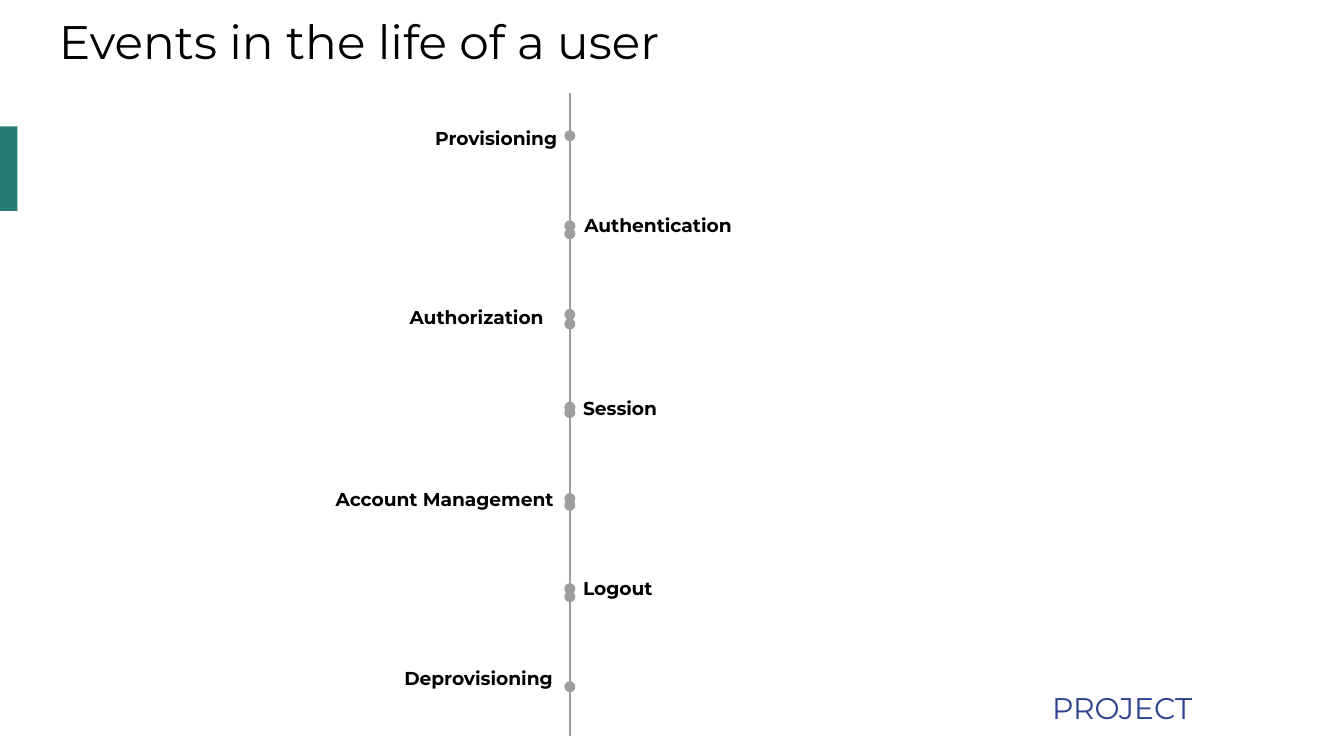
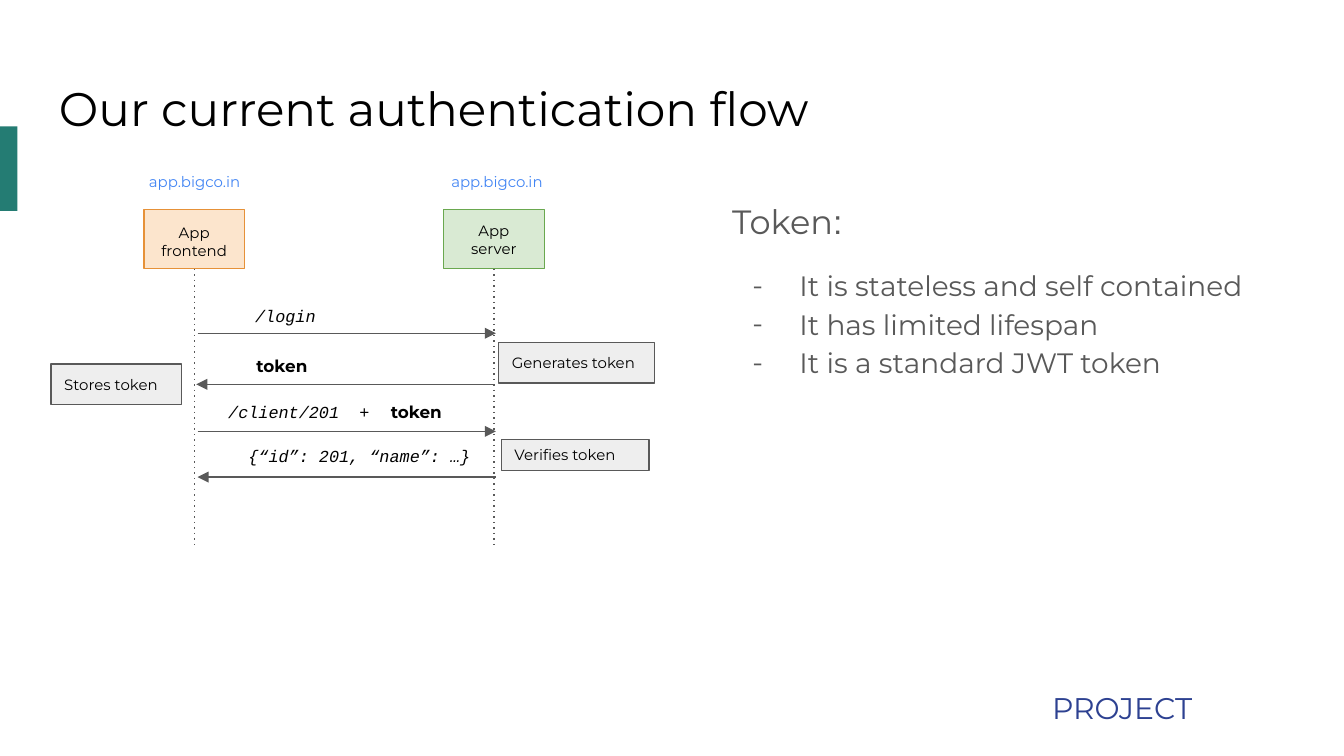
from lxml.etree import SubElement
from pptx import Presentation
from pptx.dml.color import RGBColor
from pptx.enum.shapes import MSO_CONNECTOR, MSO_SHAPE
from pptx.enum.text import MSO_ANCHOR, PP_ALIGN
from pptx.oxml.ns import qn
from pptx.util import Inches, Pt

# Shared look
PAGE_WIDTH = 10
PAGE_HEIGHT = PAGE_WIDTH * 9 / 16
SANS, CODE = "Montserrat", "Courier New"
BLACK, GRAY, SILVER, LIGHT = "000000", "595959", "9E9E9E", "EEEEEE"
TEAL, NAVY, LINK = "247C73", "2D4191", "4285F4"
TITLE = dict(name=SANS, size=25.2, color=BLACK)
FOOTER = dict(name=SANS, size=16, color=NAVY)
EVENT = dict(name=SANS, size=10, color=BLACK, bold=True)
SMALL = dict(name=SANS, size=8, color=BLACK)
ADDRESS = dict(SMALL, color=LINK)
CALL = dict(name=CODE, size=9, color=BLACK, italic=True)
TOKEN = dict(name=SANS, size=9, color=BLACK, bold=True)
HEADING = dict(name=SANS, size=18, color=GRAY)
POINT = dict(name=SANS, size=15, color=GRAY)

# Slide 1 content: event, left, top, width
EVENTS = [
    ("Provisioning", 3.14, 0.86, 1.16),
    ("Authentication", 4.25, 1.51, 1.46),
    ("Authorization", 2.95, 2.19, 1.42),
    ("Session", 4.24, 2.87, 1.64),
    ("Account Management", 2.4, 3.55, 2.13),
    ("Logout", 4.24, 4.21, 1.87),
    ("Deprovisioning", 2.91, 4.88, 1.42),
]
AXIS = 4.24
SPAN_TOPS, SPAN_LENGTH = (1.01, 1.68, 2.34, 3.03, 3.71, 4.38), 0.73
AXIS_ENDS = ((0.69, 1.06), (5.1, 5.48))

# Slide 2 content
ACTORS = [  # name, left, fill, line, address, address left, top inset
    ("App frontend", 1.07, "FCE5CD", "E69138", "app.bigco.in", 1.01, 0.14),
    ("App server", 3.3, "D9EAD3", "6AA84F", "app.bigco.in", 3.26, 0.1),
]
ARROWS = [  # from x, to x, y
    (1.47, 3.69, 2.48),
    (3.67, 1.46, 2.86),
    (1.47, 3.69, 3.21),
    (3.69, 1.47, 3.55),
]
MESSAGES = [  # text, format, left, top, width
    ("/login", CALL, 1.8, 2.2, 0.75),
    ("token", TOKEN, 1.81, 2.57, 1.01),
    ("/client/201  +", CALL, 1.6, 2.91, 1.36),
    ("token", TOKEN, 2.81, 2.91, 1.01),
    ("{“id”: 201, “name”: …}", CALL, 1.75, 3.24, 1.9),
]
NOTES = [  # text, left, top, width, height
    ("Generates token", 3.71, 2.55, 1.16, 0.3),
    ("Verifies token", 3.73, 3.27, 1.1, 0.23),
    ("Stores token", 0.38, 2.71, 0.97, 0.3),
]
POINTS = [
    "It is stateless and self contained",
    "It has limited lifespan",
    "It is a standard JWT token",
]


def rgb(value):
    return RGBColor.from_string(value)


def add_span(para, text, look):
    span = para.add_run()
    span.text = text
    for key, value in look.items():
        if key == "color":
            span.font.color.rgb = rgb(value)
        else:
            setattr(span.font, key, Pt(value) if key == "size" else value)


def set_frame(box, top=0.1, bottom=0.1, anchor=MSO_ANCHOR.TOP):
    frame = box.text_frame
    settings = dict(word_wrap=True, vertical_anchor=anchor,
                    margin_left=Inches(0.1), margin_right=Inches(0.1),
                    margin_top=Inches(top), margin_bottom=Inches(bottom))
    for key, value in settings.items():
        setattr(frame, key, value)
    return frame


def add_text(page, text, look, left, top, width, height, inset=0.1):
    box = page.shapes.add_textbox(*map(Inches, (left, top, width, height)))
    para = set_frame(box, inset, inset).paragraphs[0]
    add_span(para, text, look)
    return para


def add_box(page, left, top, width, height, fill, line=None):
    box = page.shapes.add_shape(
        MSO_SHAPE.RECTANGLE, *map(Inches, (left, top, width, height)))
    box.shadow.inherit = False
    box.fill.solid()
    box.fill.fore_color.rgb = rgb(fill)
    if line:
        box.line.color.rgb = rgb(line)
        box.line.width = Pt(0.75)
    else:
        box.line.fill.background()
    return box


def add_label_box(page, text, place, fill, line, align, top=0.1):
    box = add_box(page, *place, fill, line)
    para = set_frame(box, top=top, anchor=MSO_ANCHOR.MIDDLE).paragraphs[0]
    para.alignment = align
    add_span(para, text, SMALL)
    return box


def add_line(page, start, end, color, head=None, tail=None, dash=None):
    line = page.shapes.add_connector(
        MSO_CONNECTOR.STRAIGHT, *map(Inches, (*start, *end)))
    line.line.color.rgb = rgb(color)
    line.line.width = Pt(0.75)
    outline = line.line._get_or_add_ln()
    if dash:
        SubElement(outline, qn("a:prstDash"), val=dash)
    for tag, kind in (("a:headEnd", head), ("a:tailEnd", tail)):
        if kind:
            SubElement(outline, qn(tag), type=kind)
    SubElement(line._element.spPr, qn("a:effectLst"))
    return line


def add_bullet(para, mark, color):
    props = para._p.get_or_add_pPr()
    props.set("marL", str(Inches(0.5)))
    props.set("indent", str(Inches(-0.35)))
    tint = SubElement(props, qn("a:buClr"))
    SubElement(tint, qn("a:srgbClr"), val=color)
    SubElement(props, qn("a:buFont"), typeface=SANS)
    SubElement(props, qn("a:buChar"), char=mark)


def add_page(deck, title, title_top):
    page = deck.slides.add_slide(deck.slide_layouts[6])
    footer = add_text(page, "PROJECT", FOOTER, 7.73, 5.11, 1.32, 0.33, 0.05)
    footer.line_spacing = 0.9
    add_box(page, 0, 0.94, 0.13, 0.63, TEAL)
    add_text(page, title, TITLE, 0.34, title_top, 9.32, 0.63)
    return page


def build_events(deck):
    page = add_page(deck, "Events in the life of a user", -0.01)

    # Event labels
    for name, left, top, width in EVENTS:
        add_text(page, name, EVENT, left, top, width, 0.37)

    # Timeline with dotted joints and two plain ends
    for top in SPAN_TOPS:
        add_line(page, (AXIS, top), (AXIS, top + SPAN_LENGTH), SILVER, "oval", "oval")
    for top, bottom in AXIS_ENDS:
        add_line(page, (AXIS, top), (AXIS, bottom), SILVER)


def build_flow(deck):
    page = add_page(deck, "Our current authentication flow", 0.49)

    # Actors and their lifelines
    for name, left, fill, line, address, address_left, inset in ACTORS:
        box = add_label_box(page, name, (left, 1.56, 0.75, 0.44), fill, line,
                            PP_ALIGN.CENTER, inset)
        middle = left + 0.75 / 2
        lifeline = add_line(page, (middle, 2), (middle, 4.06), GRAY, dash="dot")
        lifeline.begin_connect(box, 2)
        add_text(page, address, ADDRESS, address_left, 1.22, 0.97, 0.34)

    # Messages
    for start, end, height in ARROWS:
        add_line(page, (start, height), (end, height), GRAY, tail="triangle")
    for text, look, left, top, width in MESSAGES:
        add_text(page, text, look, left, top, width, 0.35)
    for text, *place in NOTES:
        add_label_box(page, text, place, LIGHT, GRAY, PP_ALIGN.LEFT)

    # Token facts
    box = page.shapes.add_textbox(*map(Inches, (5.35, 1.35, 4.23, 1.83)))
    frame = set_frame(box)
    heading = frame.paragraphs[0]
    heading.line_spacing = 1.15
    add_span(heading, "Token", HEADING)
    add_span(heading, ":", dict(HEADING, name="Arial"))
    for index, text in enumerate(POINTS):
        para = frame.add_paragraph()
        para.line_spacing = 1.15
        para.space_before = Pt(0 if index else 12)
        add_bullet(para, "-", GRAY)
        add_span(para, text, POINT)


def main():
    deck = Presentation()
    deck.slide_width, deck.slide_height = Inches(PAGE_WIDTH), Inches(PAGE_HEIGHT)
    build_events(deck)
    build_flow(deck)
    deck.save("out.pptx")


if __name__ == "__main__":
    main()
